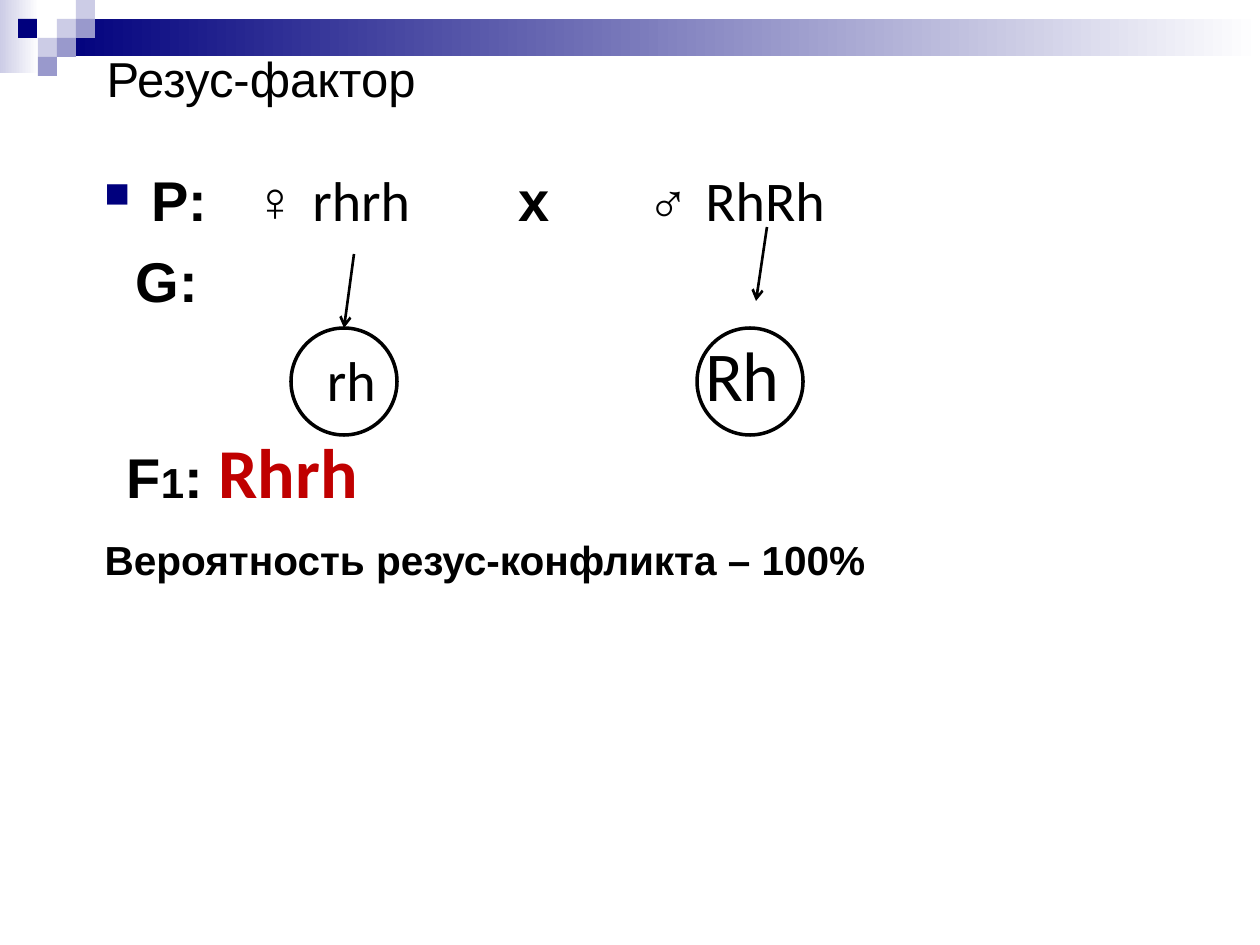
from lxml.etree import SubElement
from pptx import Presentation
from pptx.dml.color import RGBColor
from pptx.enum.shapes import MSO_CONNECTOR as CONN, MSO_SHAPE as SHAPE
from pptx.enum.text import MSO_ANCHOR as ANCHOR, MSO_AUTO_SIZE as AUTO, PP_ALIGN as ALIGN
from pptx.oxml.ns import qn
from pptx.util import Emu, Pt

SCALE = 914400 / 126
BLACK, NAVY, LILAC, VIOLET, RED = "000000", "00007D", "CCCCE6", "9999CC", "C00000"


def px(n):
    return Emu(round(n * SCALE))


def rgb(value):
    return RGBColor.from_string(value)


class Deck:
    font = "Arial"
    symbol_font = "Calibri"

    def __init__(self, prs):
        self.s = prs.slides.add_slide(prs.slide_layouts[1])

    def place(self, sp, x, y, w, h):
        sp.left, sp.top, sp.width, sp.height = px(x), px(y), px(w), px(h)
        tf = sp.text_frame
        tf.vertical_anchor = ANCHOR.TOP
        return tf

    def run(self, p, text, size=32, bold=True, font=None, color=BLACK, base=0):
        r = p.add_run()
        r.text = text
        r.font.name = font or self.font
        r.font.size = Pt(size)
        r.font.bold = bold
        r.font.color.rgb = rgb(color)
        if base:
            r.font._element.set("baseline", str(base * 1000))

    def title(self, text, x, y, w, h):
        tf = self.place(self.s.shapes.title, x, y, w, h)
        tf.word_wrap = False
        tf.auto_size = AUTO.SHAPE_TO_FIT_TEXT
        p = tf.paragraphs[0]
        p.alignment = ALIGN.LEFT
        self.run(p, text, 28, False)

    def body(self, lines, x, y, w, h):
        tf = self.place(self.s.placeholders[1], x, y, w, h)
        tf.word_wrap = True
        tf.auto_size = AUTO.NONE
        for i, (margin, before, bullet, tabs, runs) in enumerate(lines):
            p = tf.add_paragraph() if i else tf.paragraphs[0]
            if before:
                p.space_before = Pt(before)
            self.format(p, margin, bullet, tabs)
            for text, style in runs:
                self.run(p, text, **style)

    def format(self, p, margin, bullet, tabs):
        pPr = p._p.get_or_add_pPr()
        pPr.set("marL", str(px(margin)))
        pPr.set("indent", "0")
        if bullet:
            SubElement(SubElement(pPr, qn("a:buClr")), qn("a:srgbClr"), val=NAVY)
            SubElement(pPr, qn("a:buSzPct"), val="75000")
            SubElement(pPr, qn("a:buFont"), typeface=self.font)
            SubElement(pPr, qn("a:buChar"), char=bullet)
        else:
            SubElement(pPr, qn("a:buNone"))
        if tabs:
            tab_list = SubElement(pPr, qn("a:tabLst"))
            for pos in tabs:
                SubElement(tab_list, qn("a:tab"), pos=str(px(pos)), algn="l")

    def label(self, text, size, x, y, w, h):
        tf = self.place(self.s.shapes.add_textbox(0, 0, 0, 0), x, y, w, h)
        tf.margin_left = tf.margin_right = tf.margin_top = tf.margin_bottom = 0
        tf.word_wrap = True
        self.run(tf.paragraphs[0], text, size, False, self.symbol_font)

    def rect(self, x, y, w, h, *colors):
        sp = self.s.shapes.add_shape(SHAPE.RECTANGLE, px(x), px(y), px(w), px(h))
        sp.shadow.inherit = False
        sp.line.fill.background()
        if len(colors) == 1:
            sp.fill.solid()
            sp.fill.fore_color.rgb = rgb(colors[0])
        else:
            sp.fill.gradient()
            sp.fill.gradient_angle = 0
            for stop, color in zip(sp.fill.gradient_stops, colors):
                stop.color.rgb = rgb(color)

    def circle(self, x, y, w, h):
        sp = self.s.shapes.add_shape(SHAPE.OVAL, px(x), px(y), px(w), px(h))
        sp.shadow.inherit = False
        sp.fill.background()
        sp.line.color.rgb = rgb(BLACK)
        sp.line.width = Pt(2)

    def arrow(self, x1, y1, x2, y2):
        c = self.s.shapes.add_connector(CONN.STRAIGHT, px(x1), px(y1), px(x2), px(y2))
        c.line.color.rgb = rgb(BLACK)
        c.line.width = Pt(1.5)
        SubElement(c.line._get_or_add_ln(), qn("a:tailEnd"), type="arrow")
        SubElement(c._element.spPr, qn("a:effectLst"))


def main():
    prs = Presentation()
    prs.slide_width, prs.slide_height = px(1260), px(945)
    deck = Deck(prs)

    deck.rect(0, 0, 39, 73, LILAC, "FFFFFF")
    deck.rect(57, 19, 1203, 37, NAVY, "FFFFFF")
    squares = [(57, 19, LILAC), (76, 0, LILAC), (76, 19, VIOLET), (38, 38, LILAC),
               (18, 19, NAVY), (57, 38, VIOLET), (38, 57, VIOLET)]
    for x, y, color in squares:
        deck.rect(x, y, 19, 19, color)

    bold = {}
    gene = {"bold": False, "font": deck.symbol_font}
    deck.body([
        (0, None, "■", [47, 150, 414, 543],
         [("\tP:\t♀ ", bold), ("rhrh\t", gene), ("х", bold), ("\t", {"size": 40}),
          ("♂ ", bold), ("RhRh", gene)]),
        (31, None, None, [], [("G:", bold)]),
        (22, 65.4, None, [],
         [("F", bold), ("1", {"size": 24}), (": ", bold),
          ("Rhrh", {"size": 40, "font": deck.symbol_font, "color": RED})]),
        (0, None, None, [],
         [("Вероятность резус-конфликта – 100%", {"size": 40, "base": 30})]),
    ], 92, 145, 1134, 536)

    deck.arrow(354, 254, 344, 328)
    deck.arrow(767, 227, 756, 301)
    for x in (291, 697):
        deck.circle(x, 328, 106, 107)
    deck.label("rh", 32, 327, 345, 64, 68)
    deck.label("Rh", 40, 705, 331, 92, 85)
    deck.title("Резус-фактор", 94, 42, 338, 72)

    prs.save("out.pptx")


if __name__ == "__main__":
    main()
